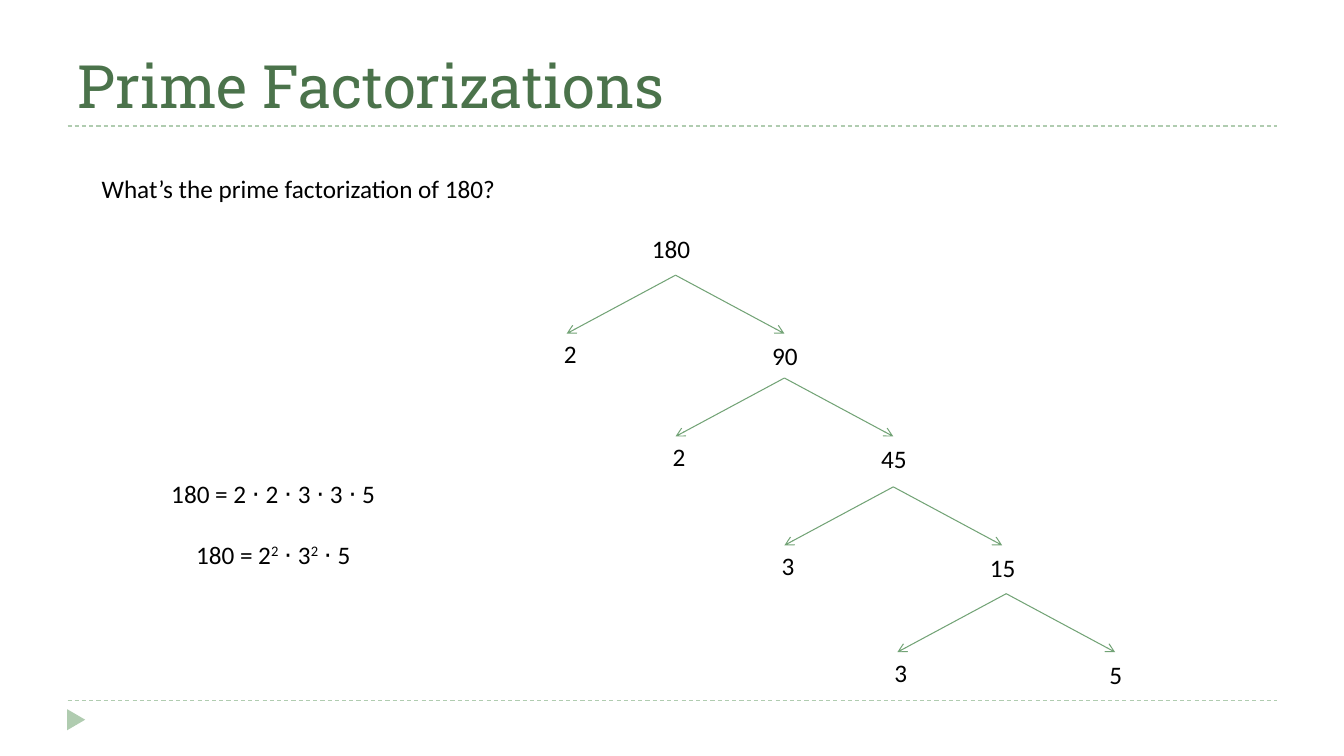
from lxml.etree import SubElement
from pptx import Presentation
from pptx.dml.color import RGBColor
from pptx.enum.dml import MSO_LINE_DASH_STYLE as DASH
from pptx.enum.shapes import MSO_CONNECTOR as CONN, MSO_SHAPE as SHAPE
from pptx.enum.text import MSO_ANCHOR as ANCHOR, MSO_AUTO_SIZE as AUTO, PP_ALIGN as ALIGN
from pptx.oxml.ns import qn
from pptx.util import Inches, Pt

TITLE, RULE, BRANCH, INK = "4B734B", "B0CCB0", "72A376", "000000"
SPLITS = [
    (6.7, 2.73, "2", "90"),
    (7.78, 3.75, "2", "45"),
    (8.86, 4.83, "3", "15"),
    (9.98, 5.89, "3", "5"),
]


def color(value):
    """Return the colour for a hex string."""
    return RGBColor.from_string(value)


def add_line(s, x1, y1, x2, y2, stroke):
    """Draw a thin straight line without a shadow."""
    line = s.shapes.add_connector(CONN.STRAIGHT, *map(Inches, (x1, y1, x2, y2)))
    line.line.color.rgb = color(stroke)
    line.line.width = Pt(0.75)
    SubElement(line._element.spPr, qn("a:effectLst"))
    return line


def add_text(s, x, y, w, h, runs, align=ALIGN.CENTER, wrap=True):
    """Place one paragraph given as (text, is superscript) runs."""
    sp = s.shapes.add_textbox(*map(Inches, (x, y, w, h)))
    tf = sp.text_frame
    tf.word_wrap = wrap
    p = tf.paragraphs[0]
    p.alignment = align
    p.font.name, p.font.size = "Calibri", Pt(18)
    p.font.color.rgb = color(INK)
    for text, raised in runs:
        r = p.add_run()
        r.text = text
        if raised:
            r.font._element.set("baseline", "30000")


def add_frame(s, x, y, w, h):
    """Draw the dashed rules and the corner marker."""
    for rule_y in (y, y + h):
        add_line(s, x, rule_y, x + w, rule_y, RULE).line.dash_style = DASH.DASH
    sp = s.shapes.add_shape(SHAPE.ISOSCELES_TRIANGLE, *map(Inches, (x - 0.02, y + h + 0.1, 0.21, 0.18)))
    sp.rotation = 90
    sp.shadow.inherit = False
    sp.fill.solid()
    sp.fill.fore_color.rgb = color(RULE)
    sp.line.fill.background()


def set_title(s, x, y, w, h, text):
    """Move and format the title placeholder."""
    sp = s.shapes.title
    sp.left, sp.top, sp.width, sp.height = map(Inches, (x, y, w, h))
    tf = sp.text_frame
    tf.text = text
    tf.auto_size = AUTO.NONE
    tf.vertical_anchor = ANCHOR.BOTTOM
    p = tf.paragraphs[0]
    p.alignment = ALIGN.LEFT
    p.font.name, p.font.size = "Roboto Slab", Pt(42.7)
    p.font.color.rgb = color(TITLE)


def add_split(s, x, y, prime, rest):
    """Branch from an apex to a prime on the left and the rest on the right."""
    for side, label, shift, drop in ((1, rest, 0.71, 0.6), (-1, prime, -1.42, 0.58)):
        line = add_line(s, x, y, x + side * 1.08, y + 0.58, BRANCH)
        SubElement(line.line._get_or_add_ln(), qn("a:tailEnd"), type="arrow")
        add_text(s, x + shift, y + drop, 0.75, 0.67, [(label, False)])


def add_tree(s, x, y, w, h):
    """Draw the root number and every split below it."""
    add_text(s, x, y, w, h, [("180", False)])
    for split in SPLITS:
        add_split(s, *split)


def add_answers(s, x, y, w, h):
    """Write the expanded product and its power form."""
    add_text(s, x, y, w, h, [("180 = 2 ⋅ 2 ⋅ 3 ⋅ 3 ⋅ 5", False)])
    powers = [("180 = 2", False), ("2", True), (" ⋅ 3", False), ("2", True), (" ⋅ 5", False)]
    add_text(s, x, y + 0.6, w, h, powers)


def main():
    """Build and save the slide."""
    prs = Presentation()
    prs.slide_width, prs.slide_height = Inches(13.33), Inches(7.5)
    s = prs.slides.add_slide(prs.slide_layouts[5])
    add_frame(s, 0.67, 1.25, 12, 5.7)
    set_title(s, 0.67, 0.17, 12, 1.08, "Prime Factorizations")
    question = [("What’s the prime factorization of 180?", False)]
    add_text(s, 0.91, 1.67, 4.13, 0.4, question, ALIGN.LEFT, False)
    add_tree(s, 4.75, 2.27, 3.81, 0.67)
    add_answers(s, 0.67, 4.7, 4.08, 0.4)
    prs.save("out.pptx")


if __name__ == "__main__":
    main()
